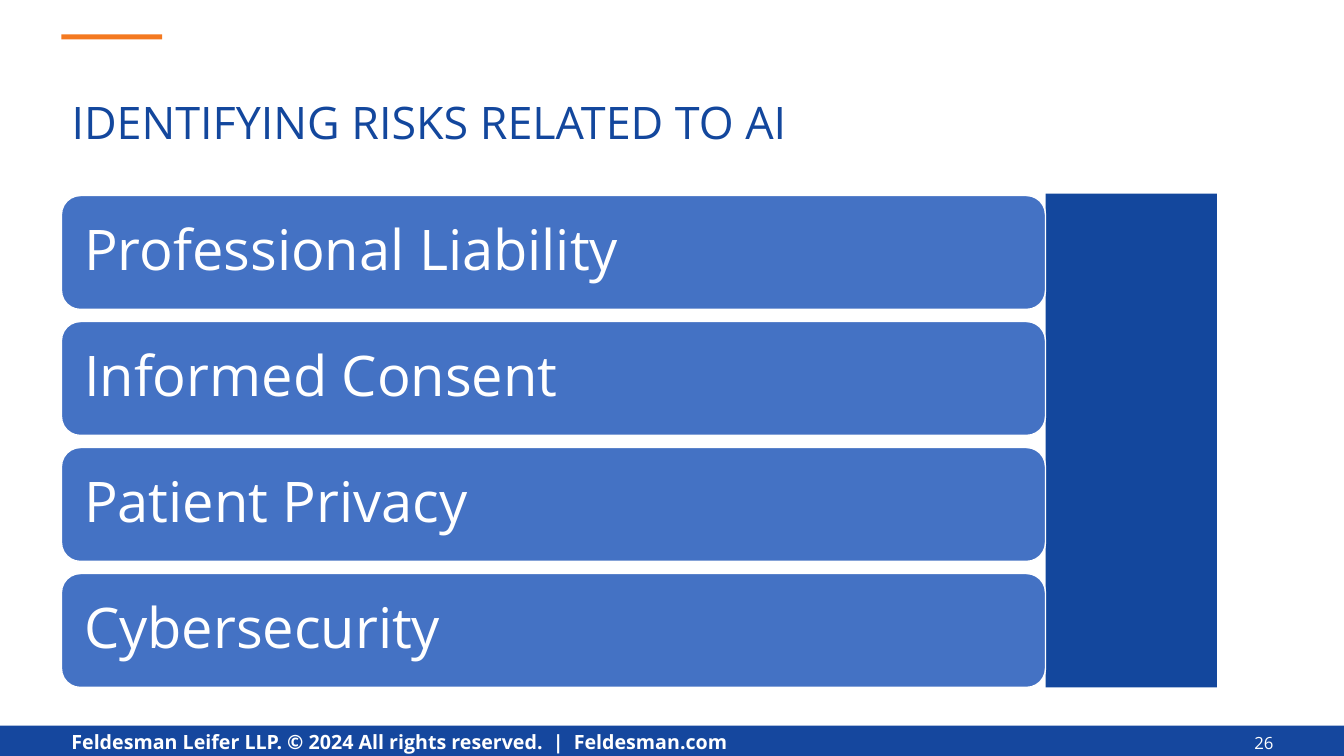
from pptx import Presentation
from pptx.dml.color import RGBColor
from pptx.enum.shapes import MSO_SHAPE
from pptx.enum.text import MSO_ANCHOR, MSO_AUTO_SIZE, PP_ALIGN
from pptx.util import Inches, Pt

HUES = {"orange": "F47920", "bar": "15479E", "navy": "13479D",
        "blue": "4472C4", "white": "FFFFFF"}
LEFT = 0.61


def write(shape, text, size, hue="white", bold=False, align=PP_ALIGN.LEFT,
          anchor=MSO_ANCHOR.MIDDLE, inset=None):
    frame = shape.text_frame
    frame.word_wrap = True
    frame.auto_size = MSO_AUTO_SIZE.NONE
    frame.vertical_anchor = anchor
    if inset is not None:
        frame.margin_left = frame.margin_right = Inches(inset)
        frame.margin_top = frame.margin_bottom = Inches(inset)
    para = frame.paragraphs[0]
    para.alignment = align
    para.space_before = Pt(0)
    run = para.add_run()
    run.text = text
    run.font.name = "Open Sans"
    run.font.size = Pt(size)
    run.font.bold = bold
    run.font.color.rgb = RGBColor.from_string(HUES[hue])
    return para


def block(kind, x, y, w, h, hue, edge=None):
    shape = slide.shapes.add_shape(kind, Inches(x), Inches(y), Inches(w), Inches(h))
    shape.shadow.inherit = False
    shape.fill.solid()
    shape.fill.fore_color.rgb = RGBColor.from_string(HUES[hue])
    if edge:
        shape.line.color.rgb = RGBColor.from_string(HUES[edge])
        shape.line.width = Pt(1)
    else:
        shape.line.fill.background()
    return shape


deck = Presentation()
deck.slide_width, deck.slide_height = Inches(13.33), Inches(7.5)
slide = deck.slides.add_slide(deck.slide_layouts[5])

# Accent, footer bar and side panel
block(MSO_SHAPE.RECTANGLE, LEFT, 0.34, 1, 0.05, "orange")
block(MSO_SHAPE.RECTANGLE, 0, 7.2, 13.33, 0.3, "bar")
block(MSO_SHAPE.RECTANGLE, 10.37, 1.92, 1.7, 4.9, "navy")

# Title
title = slide.shapes.title
title.left, title.top = Inches(LEFT), Inches(0.83)
title.width, title.height = Inches(12), Inches(0.75)
write(title, "IDENTIFYING RISKS RELATED TO AI", 32, hue="navy")

# Risk list
risks = ["Professional Liability", "Informed Consent", "Patient Privacy", "Cybersecurity"]
for row, risk in enumerate(risks):
    card = block(MSO_SHAPE.ROUNDED_RECTANGLE, LEFT, 1.94 + 1.25 * row, 9.76, 1.13,
                 "blue", edge="white")
    para = write(card, risk, 40, inset=0.17)
    para.line_spacing = 0.9

# Footer text and page number
foot = slide.shapes.add_textbox(Inches(LEFT), Inches(7.19), Inches(6.88), Inches(0.31))
write(foot, "Feldesman Leifer LLP. © 2024 All rights reserved.  |  Feldesman.com", 14,
      bold=True, anchor=MSO_ANCHOR.TOP)
foot.text_frame.margin_top = Inches(0.05)
page = slide.shapes.add_textbox(Inches(9.73), Inches(7.17), Inches(3), Inches(0.4))
write(page, "26", 12, align=PP_ALIGN.RIGHT)

deck.save("out.pptx")
